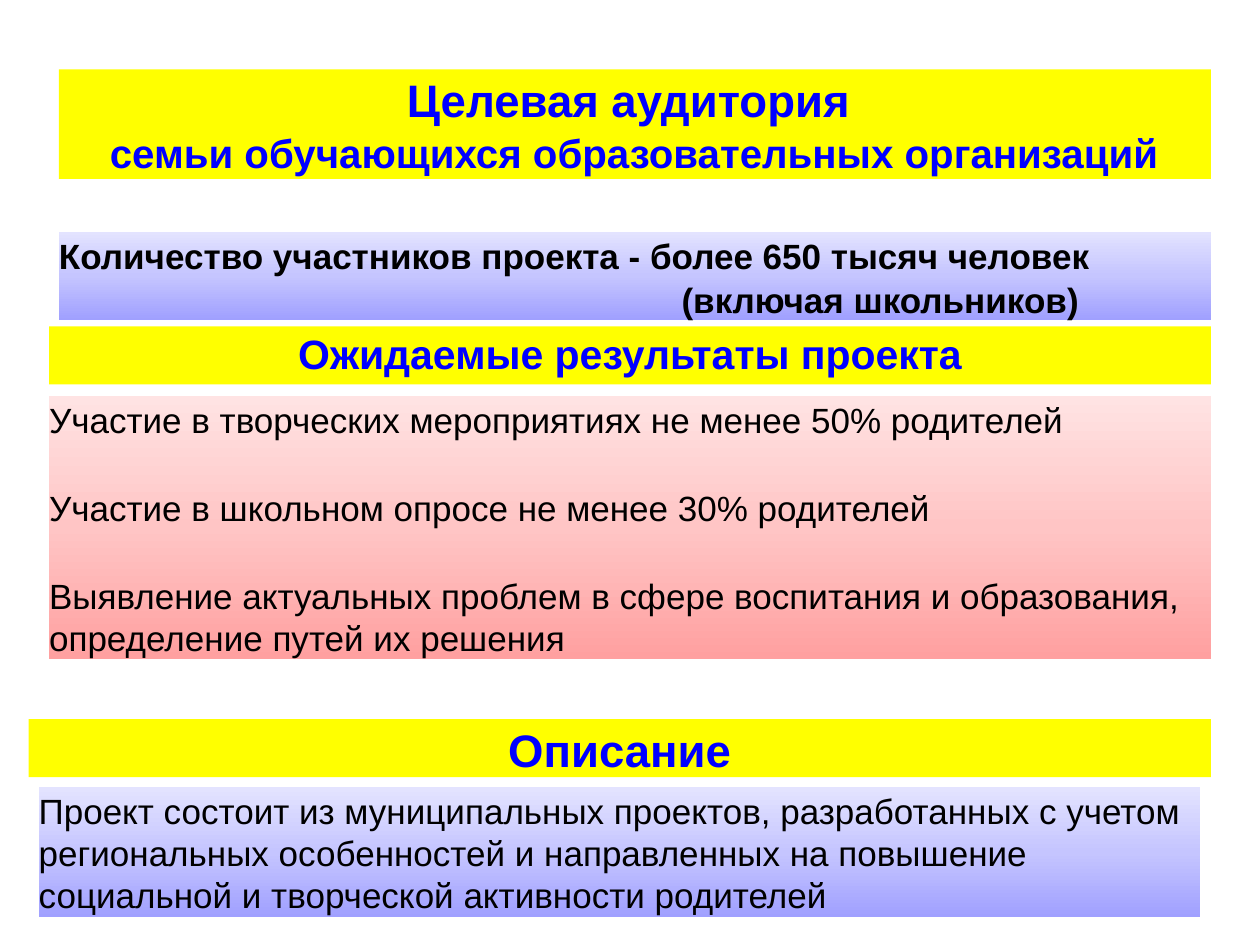
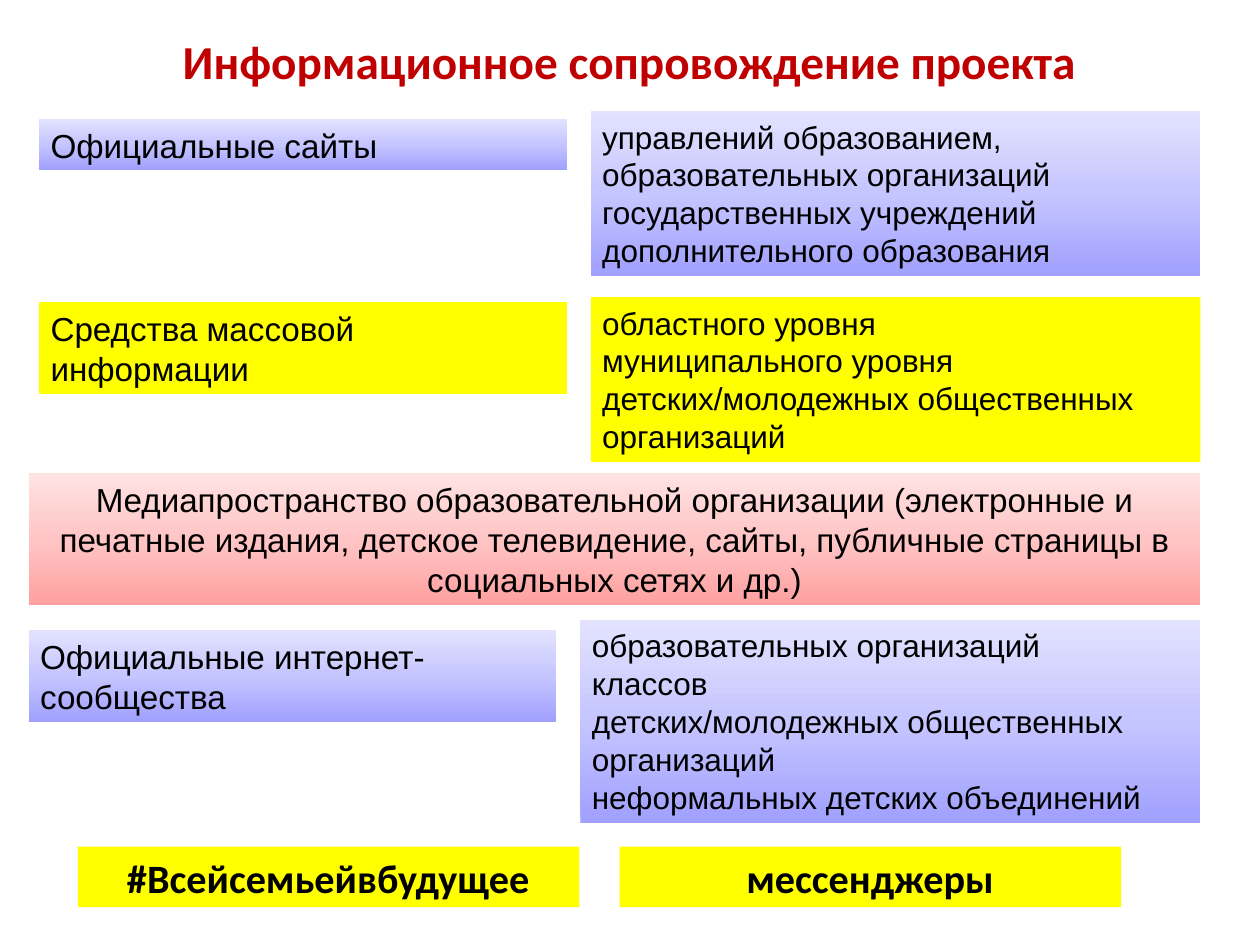
from copy import deepcopy
from dataclasses import dataclass
from pptx import Presentation
from pptx.dml.color import RGBColor as Rgb
from pptx.enum.shapes import MSO_SHAPE as Preset
from pptx.enum.text import MSO_ANCHOR as Anchor, MSO_AUTO_SIZE as AutoSize, PP_ALIGN as Align
from pptx.oxml.ns import qn
from pptx.util import Cm, Pt


@dataclass(frozen=True)
class Theme:
    yellow: tuple = ("FFFF00",)
    lilac: tuple = ("A0A0FF", "C5C5FF", "E3E3FF")
    rose: tuple = ("FFA0A0", "FFC5C5", "FFE3E3")
    blue: str = "0000FF"
    red: str = "C00000"
    black: str = "000000"
    sans: str = "Arial"
    accent: str = "Calibri"
    banner: float = 26
    subtitle: float = 23
    section: float = 23.4
    statement: float = 20
    heading: float = 27
    label: float = 19
    detail: float = 18
    tag: float = 23
    leading: float = 1.2
    before: float = 1.2
    tight: tuple = (0, 0.05, 0, 0)
    titled: tuple = (0.25, 0.05, 0.25, 0.13)
    padded: tuple = (0.23, 0.13, 0.23, 0.13)


THEME = Theme()


@dataclass(frozen=True)
class Box:
    left: float
    top: float
    width: float
    height: float

    def inner(self, dx=0, dy=0, width=None, height=None):
        return Box(self.left + dx, self.top + dy, width or self.width, height or self.height)

    def place(self, shape):
        shape.left, shape.top = Cm(self.left), Cm(self.top)
        shape.width, shape.height = Cm(self.width), Cm(self.height)


@dataclass(frozen=True)
class Style:
    size: float
    color: str = THEME.black
    bold: bool = False
    font: str = THEME.sans
    align: Align = Align.LEFT
    before: float = 0
    insets: tuple = THEME.padded


BANNER = Style(THEME.banner, THEME.blue, True, align=Align.CENTER, before=THEME.before, insets=THEME.tight)
SECTION = Style(THEME.section, THEME.blue, True, align=Align.CENTER, before=THEME.before, insets=THEME.titled)
STATEMENT = Style(THEME.statement, before=THEME.before, insets=THEME.tight)
COUNT = Style(THEME.statement, bold=True, before=THEME.before, insets=THEME.tight)
HEADING = Style(THEME.heading, THEME.red, True, THEME.accent, Align.CENTER)
LABEL = Style(THEME.label)
MEDIA = Style(THEME.label, align=Align.CENTER)
DETAIL = Style(THEME.detail)
TAG = Style(THEME.tag, bold=True, font=THEME.accent, align=Align.CENTER)


def paint(shape, colors):
    if len(colors) == 1:
        shape.fill.solid()
        shape.fill.fore_color.rgb = Rgb.from_string(colors[0])
        return
    shape.fill.gradient()
    shape.fill.gradient_angle = 90
    stop_list = next(shape._element.spPr.iter(qn("a:gsLst")))
    stop_list.insert(1, deepcopy(stop_list[0]))
    for position, (stop, color) in enumerate(zip(shape.fill.gradient_stops, colors)):
        stop.position = position / (len(colors) - 1)
        stop.color.rgb = Rgb.from_string(color)


def write(shape, lines, style, anchor=Anchor.TOP):
    frame = shape.text_frame
    frame.text = "\n".join(lines)
    frame.word_wrap = True
    frame.auto_size = AutoSize.NONE
    frame.vertical_anchor = anchor
    (frame.margin_left, frame.margin_top,
     frame.margin_right, frame.margin_bottom) = map(Cm, style.insets)
    for paragraph in frame.paragraphs:
        paragraph.alignment = style.align
        paragraph.space_before = Pt(style.before)
        if style.font == THEME.sans:
            paragraph.line_spacing = Pt(style.size * THEME.leading)
        for run in paragraph.runs:
            run.font.name = style.font
            run.font.size = Pt(style.size)
            run.font.bold = style.bold
            run.font.color.rgb = Rgb.from_string(style.color)
    return frame.paragraphs


def add_band(slide, box, colors, lines, style):
    band = slide.shapes.add_shape(Preset.RECTANGLE, 0, 0, 0, 0)
    box.place(band)
    band.shadow.inherit = False
    band.line.fill.background()
    paint(band, colors)
    return write(band, lines, style)


def set_title(slide, box, text, style):
    title = slide.shapes.title
    box.place(title)
    write(title, [text], style, Anchor.MIDDLE)
    return title


def add_audience(slide, box):
    _, families = add_band(
        slide, box.inner(height=2.21), THEME.yellow,
        ["Целевая аудитория ", "семьи обучающихся образовательных организаций"], BANNER)
    families.runs[0].font.size = Pt(THEME.subtitle)
    families.line_spacing = Pt(THEME.subtitle * THEME.leading)
    _, included = add_band(
        slide, box.inner(dy=3.27, height=1.78), THEME.lilac,
        ["Количество участников проекта - более 650 тысяч человек", "(включая школьников)"], COUNT)
    included._p.get_or_add_pPr().set("marL", str(Cm(12.55)))


def add_results(slide, box):
    title = set_title(slide, box.inner(height=1.17), "Ожидаемые результаты проекта", SECTION)
    paint(title, THEME.yellow)
    results = add_band(slide, box.inner(dy=1.4, height=5.31), THEME.rose, [
        "Участие в творческих мероприятиях не менее 50% родителей",
        "Участие в школьном опросе не менее 30% родителей",
        "Выявление актуальных проблем в сфере воспитания и образования, определение путей их решения",
    ], STATEMENT)
    for result in results[1:]:
        result.space_before = Pt(THEME.statement * THEME.leading + 2 * THEME.before)


def add_description(slide, box):
    add_band(slide, box.inner(height=1.17), THEME.yellow, ["Описание"], BANNER)
    add_band(slide, box.inner(0.2, 1.37, 23.42, 2.62), THEME.lilac, [
        "Проект состоит из муниципальных проектов, разработанных с учетом региональных "
        "особенностей и направленных на повышение социальной и творческой активности родителей",
    ], STATEMENT)


def add_channel(slide, box, colors, label, label_drop, label_height, details):
    detail_left = 11.12
    add_band(slide, box.inner(0, label_drop, 10.64, label_height), colors, [label], LABEL)
    add_band(slide, box.inner(detail_left, width=box.width - detail_left), colors, details, DETAIL)


def add_tags(slide, box, tags, gap=0.81):
    width = (box.width - gap * (len(tags) - 1)) / len(tags)
    for index, tag in enumerate(tags):
        add_band(slide, box.inner(index * (width + gap), width=width), THEME.yellow, [tag], TAG)


def build_project_slide(slide):
    add_audience(slide, Box(1.19, 1.4, 23.22, 5.05))
    add_results(slide, Box(0.99, 6.58, 23.42, 6.71))
    add_description(slide, Box(0.58, 14.5, 23.83, 3.99))


def build_information_slide(slide):
    set_title(slide, Box(0.58, 0.58, 24.21, 1.27), "Информационное сопровождение проекта", HEADING)
    add_channel(slide, Box(0.79, 2.24, 23.41, 3.33), THEME.lilac, "Официальные сайты", 0.15, 1.04, [
        "управлений образованием, образовательных организаций",
        "государственных учреждений дополнительного образования",
    ])
    add_channel(slide, Box(0.79, 5.99, 23.41, 3.33), THEME.yellow, "Средства массовой информации", 0.1, 1.85, [
        "областного уровня",
        "муниципального уровня",
        "детских/молодежных общественных организаций",
    ])
    add_band(slide, Box(0.58, 9.53, 23.62, 2.67), THEME.rose, [
        "Медиапространство образовательной организации (электронные и печатные издания, "
        "детское телевидение, сайты, публичные страницы в социальных сетях и др.)",
    ], MEDIA)
    add_channel(slide, Box(0.58, 12.5, 23.62, 4.09), THEME.lilac, "Официальные интернет-сообщества", 0.2, 1.85, [
        "образовательных организаций",
        "классов",
        "детских/молодежных общественных организаций",
        "неформальных детских объединений",
    ])
    add_tags(slide, Box(1.57, 17.07, 21.03, 1.22), ["#Всейсемьейвбудущее", "мессенджеры"])


def main():
    deck = Presentation()
    deck.slide_width, deck.slide_height = Cm(25.4), Cm(19.05)
    title_only = deck.slide_layouts[5]
    for build in (build_project_slide, build_information_slide):
        build(deck.slides.add_slide(title_only))
    deck.save("out.pptx")


if __name__ == "__main__":
    main()
